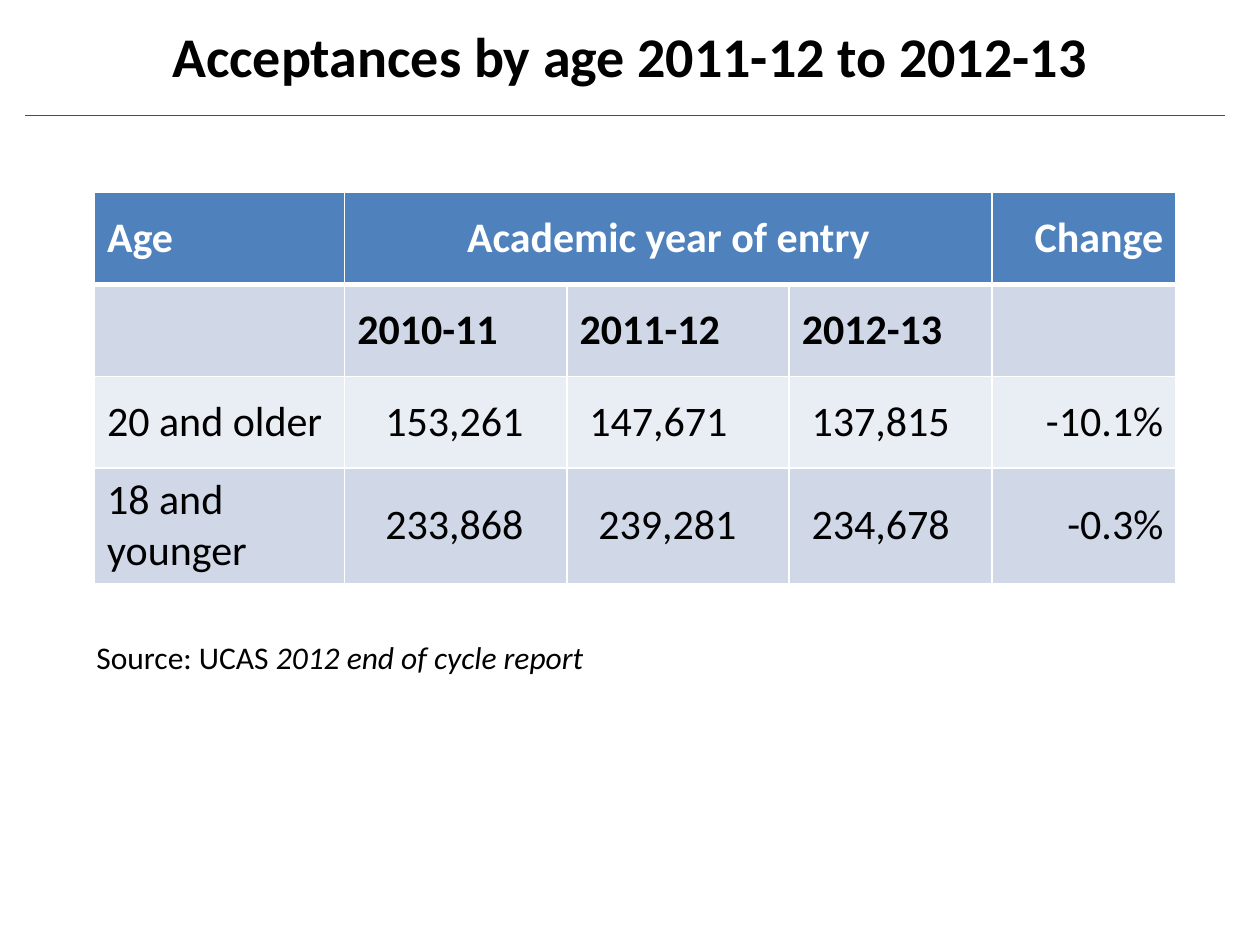
from lxml.etree import SubElement
from pptx import Presentation
from pptx.dml.color import RGBColor
from pptx.enum.shapes import MSO_CONNECTOR
from pptx.enum.text import MSO_ANCHOR, PP_ALIGN as Align
from pptx.oxml.ns import qn
from pptx.util import Pt

COLORS = {
    "text": "000000",
    "white": "FFFFFF",
    "rule": "135E83",
    "header": "4F81BD",
    "band_dark": "D0D8E8",
    "band_light": "E9EDF4",
}
FONT = "Calibri"
COLUMN_WIDTHS = [143, 127, 127, 116, 105]
ROW_HEIGHTS = [52.5, 52.5, 52.5, 65.5]
ROW_FILLS = ["header", "band_dark", "band_light", "band_dark"]
ROWS = [
    ["Age", "Academic year of entry", "", "", "Change"],
    ["", "2010-11", "2011-12", "2012-13", ""],
    ["20 and older", "153,261", "147,671", "137,815", "-10.1%"],
    ["18 and younger", "233,868", "239,281", "234,678", "-0.3%"],
]
CELL_MARGIN = 7.2
FIGURE_INDENTS = {
    (2, 1): 23.3, (2, 2): 12.8, (2, 3): 12.8,
    (3, 1): 23.3, (3, 2): 18, (3, 3): 12.8,
}


def rgb(name):
    return RGBColor.from_string(COLORS[name])


def add_run(paragraph, text, size, color="text", bold=False, italic=False):
    run = paragraph.add_run()
    run.text = text
    font = run.font
    font.name, font.size = FONT, Pt(size)
    font.bold, font.italic = bold, italic
    font.color.rgb = rgb(color)


def set_borders(cell, bottom):
    """Draw white cell edges; they must come before the fill in the XML."""
    properties = cell._tc.get_or_add_tcPr()
    for edge, width in (("L", 1), ("R", 1), ("T", 1), ("B", bottom)):
        line = SubElement(properties, qn(f"a:ln{edge}"), w=str(Pt(width)))
        fill = SubElement(line, qn("a:solidFill"))
        SubElement(fill, qn("a:srgbClr"), val=COLORS["white"])


def add_heading(slide, left, top, width, height):
    title = slide.shapes.title
    title.left, title.top = Pt(left), Pt(top)
    title.width, title.height = Pt(width), Pt(height)
    title.text_frame.vertical_anchor = MSO_ANCHOR.MIDDLE
    paragraph = title.text_frame.paragraphs[0]
    paragraph.alignment = Align.CENTER
    add_run(paragraph, "Acceptances by age 2011-12 to 2012-13", 32, bold=True)


def add_rule(slide, left, top, width):
    rule = slide.shapes.add_connector(
        MSO_CONNECTOR.STRAIGHT, Pt(left), Pt(top), Pt(left + width), Pt(top))
    rule.line.color.rgb = rgb("rule")
    rule.line.width = Pt(1)
    SubElement(rule._element.spPr, qn("a:effectLst"))


def fill_cell(cell, text, row, column):
    is_header = row == 0
    set_borders(cell, bottom=3 if is_header else 1)
    cell.fill.solid()
    cell.fill.fore_color.rgb = rgb(ROW_FILLS[row])
    cell.vertical_anchor = MSO_ANCHOR.MIDDLE
    cell.margin_left = Pt(FIGURE_INDENTS.get((row, column), CELL_MARGIN))
    paragraph = cell.text_frame.paragraphs[0]
    if column == len(COLUMN_WIDTHS) - 1:
        paragraph.alignment = Align.RIGHT
    elif is_header and column:
        paragraph.alignment = Align.CENTER
    if text:
        add_run(paragraph, text, 24, "white" if is_header else "text",
                bold=row < 2)


def add_acceptances(slide, left, top):
    table = slide.shapes.add_table(
        len(ROWS), len(COLUMN_WIDTHS), Pt(left), Pt(top),
        Pt(sum(COLUMN_WIDTHS)), Pt(sum(ROW_HEIGHTS))).table
    for column, width in zip(table.columns, COLUMN_WIDTHS):
        column.width = Pt(width)
    for row, height in zip(table.rows, ROW_HEIGHTS):
        row.height = Pt(height)
    table.cell(0, 1).merge(table.cell(0, 3))
    for row, texts in enumerate(ROWS):
        for column, text in enumerate(texts):
            fill_cell(table.cell(row, column), text, row, column)


def add_source(slide, left, top, width, height):
    source = slide.shapes.add_textbox(Pt(left), Pt(top), Pt(width), Pt(height))
    source.text_frame.word_wrap = True
    paragraph = source.text_frame.paragraphs[0]
    add_run(paragraph, "Source: UCAS ", 18)
    add_run(paragraph, "2012 end of cycle report", 18, italic=True)


def main():
    deck = Presentation()
    deck.slide_width, deck.slide_height = Pt(720), Pt(540)
    slide = deck.slides.add_slide(deck.slide_layouts[5])
    add_heading(slide, 36, -13.5, 648, 90)
    add_rule(slide, 14.4, 66, 685.5)
    add_acceptances(slide, 54, 110)
    add_source(slide, 48, 361, 533, 29)
    deck.save("out.pptx")


if __name__ == "__main__":
    main()
